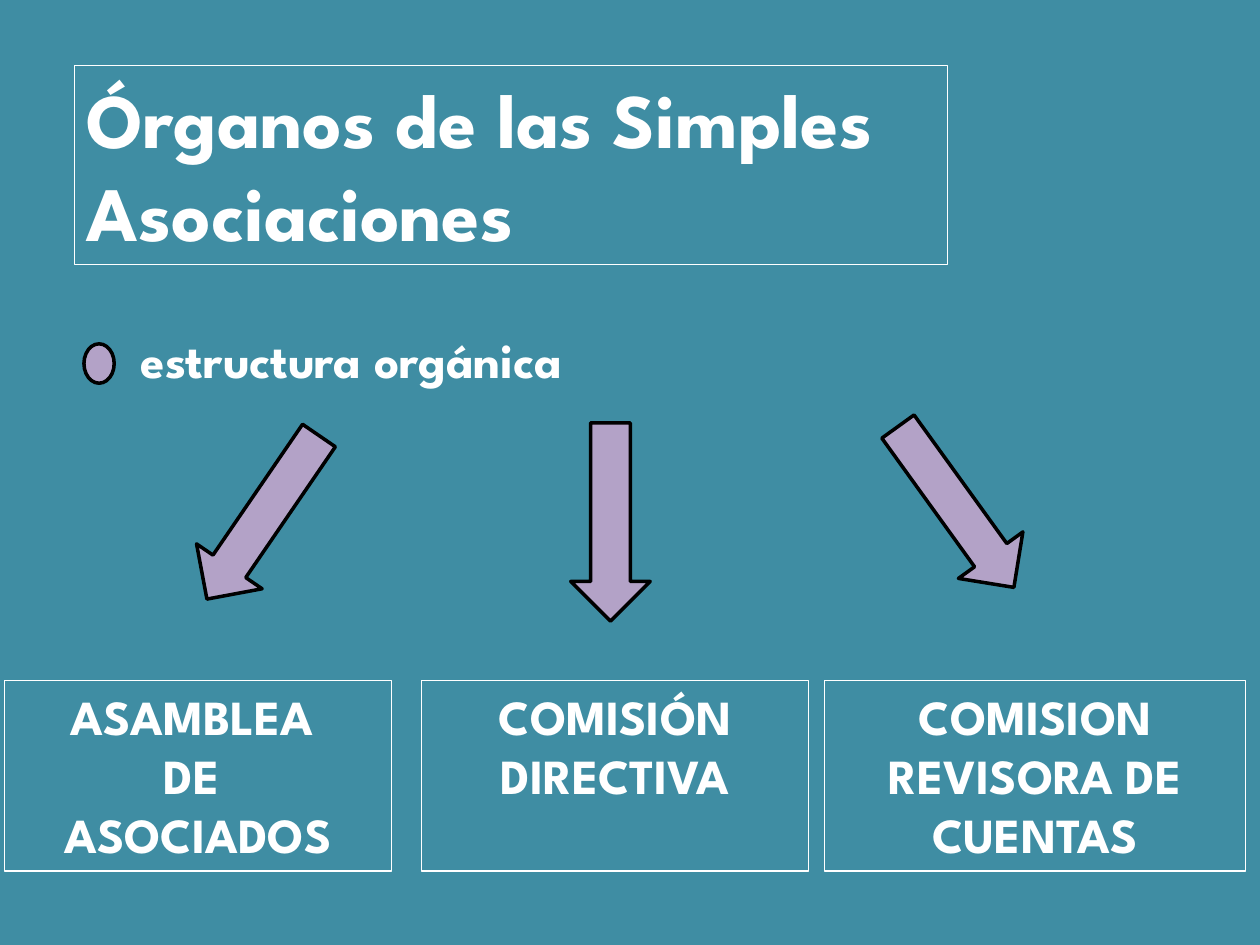
from dataclasses import dataclass

import pptx
import pptx.dml.color
import pptx.enum.shapes
import pptx.enum.text
import pptx.util

Pt = pptx.util.Pt
SHAPE = pptx.enum.shapes.MSO_SHAPE
ALIGN = pptx.enum.text.PP_ALIGN


def rgb(value):
    return pptx.dml.color.RGBColor.from_string(value)


@dataclass(frozen=True)
class Theme:
    font: str = "League Spartan"
    background: str = "3F8DA3"
    text: str = "FFFFFF"
    accent: str = "B3A2C7"
    outline: str = "000000"
    title_size: float = 44
    body_size: float = 28
    frame_width: float = 0.75
    outline_width: float = 2


def write_text(tf, text, *, font, size, color, align=ALIGN.LEFT, bold=True):
    """Fill the frame with one paragraph for each line of text."""
    tf.word_wrap = True
    tf.vertical_anchor = pptx.enum.text.MSO_ANCHOR.TOP
    for i, line in enumerate(text.split("\n")):
        p = tf.paragraphs[0] if i == 0 else tf.add_paragraph()
        p.alignment = align
        r = p.add_run()
        r.text = line
        r.font.name = font
        r.font.size = Pt(size)
        r.font.bold = bold
        r.font.color.rgb = rgb(color)


class SlideBuilder:
    def __init__(self, slide, theme):
        self.s = slide
        self.theme = theme
        fill = slide.background.fill
        fill.solid()
        fill.fore_color.rgb = rgb(theme.background)

    def _shape(self, kind, box, line, width):
        sp = self.s.shapes.add_shape(kind, *map(Pt, box))
        sp.shadow.inherit = False
        sp.line.color.rgb = rgb(line)
        sp.line.width = Pt(width)
        return sp

    def _write(self, sp, text, size, align=ALIGN.LEFT):
        write_text(sp.text_frame, text, font=self.theme.font, size=size,
                   color=self.theme.text, align=align)

    def framed_text(self, text, box, size, align=ALIGN.LEFT):
        sp = self._shape(SHAPE.RECTANGLE, box, self.theme.text,
                         self.theme.frame_width)
        sp.fill.background()
        self._write(sp, text, size, align)

    def label(self, text, box, size):
        self._write(self.s.shapes.add_textbox(*map(Pt, box)), text, size)

    def accent_shape(self, kind, box, rotation=0):
        sp = self._shape(kind, box, self.theme.outline,
                         self.theme.outline_width)
        sp.fill.solid()
        sp.fill.fore_color.rgb = rgb(self.theme.accent)
        sp.rotation = rotation


def main():
    prs = pptx.Presentation()
    prs.slide_width, prs.slide_height = Pt(720), Pt(540)
    theme = Theme()
    slide = SlideBuilder(prs.slides.add_slide(prs.slide_layouts[6]), theme)

    slide.framed_text("Órganos de las Simples Asociaciones",
                      (42.5, 37.5, 499, 113.8), theme.title_size)
    slide.label("estructura orgánica", (73.5, 185, 601, 41), theme.body_size)

    organs = [
        ("ASAMBLEA \nDE \nASOCIADOS", 2.7, 221),
        ("COMISIÓN DIRECTIVA", 241, 221),
        ("COMISION\nREVISORA DE CUENTAS", 471.3, 240.5),
    ]
    for text, left, width in organs:
        slide.framed_text(text, (left, 388.8, width, 109),
                          theme.body_size, ALIGN.CENTER)

    arrows = [(292.2, 275.6, 90), (93.6, 272.9, 124.4), (489.6, 267, 54.2)]
    for left, top, rotation in arrows:
        slide.accent_shape(SHAPE.RIGHT_ARROW, (left, top, 113.3, 45.4),
                           rotation)
    slide.accent_shape(SHAPE.OVAL, (48, 196.5, 17.3, 22.5))

    prs.save("out.pptx")


if __name__ == "__main__":
    main()
